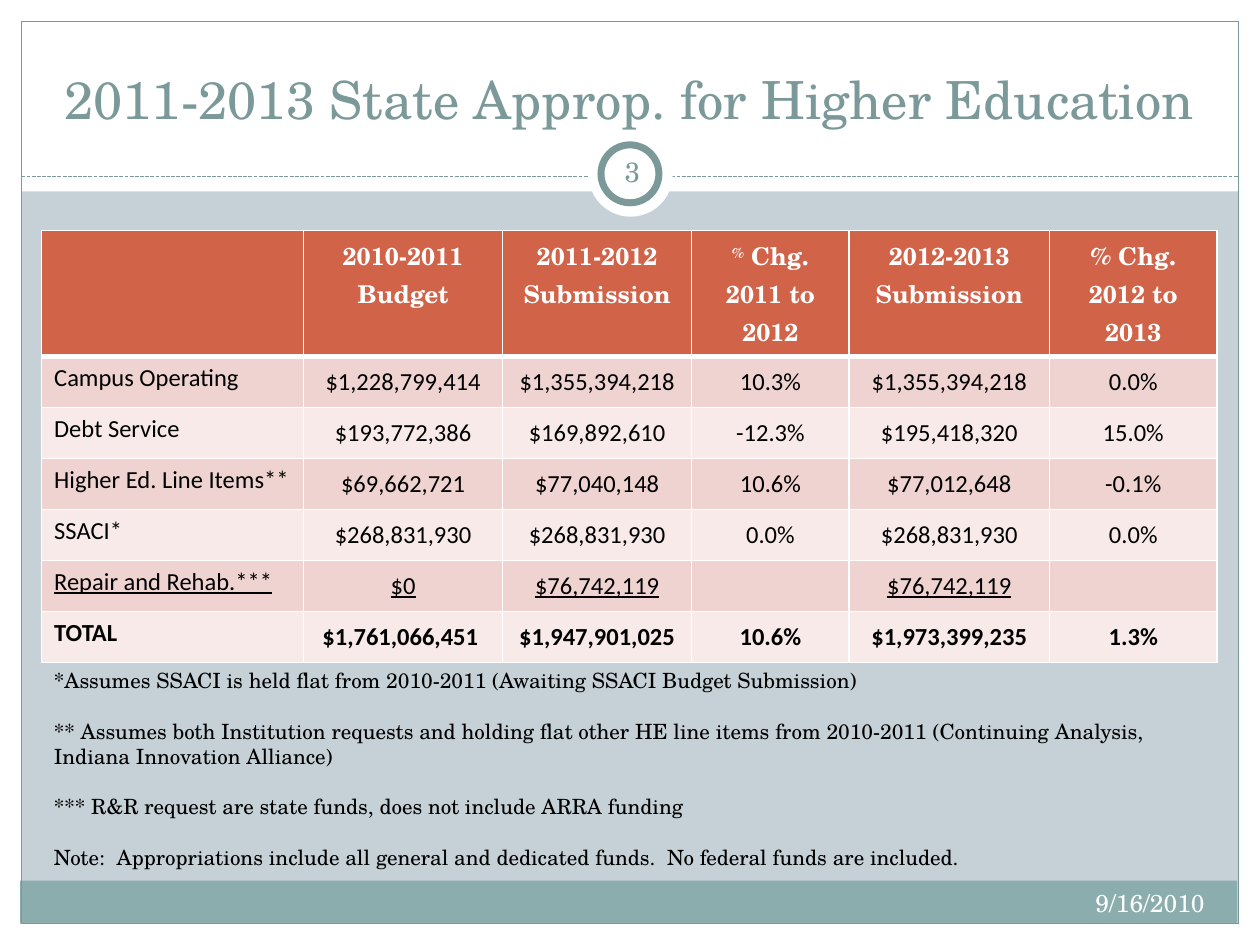
from pptx import Presentation
from pptx.dml.color import RGBColor
from pptx.enum.dml import MSO_LINE
from pptx.enum.shapes import MSO_CONNECTOR, MSO_SHAPE
from pptx.enum.text import MSO_ANCHOR, PP_ALIGN
from pptx.oxml.ns import qn
from pptx.util import Inches, Pt
from lxml.etree import SubElement

SERIF = "TeX Gyre Schola"
SANS = "Calibri"
TEAL, WHITE, BLACK = "7C999A", "FFFFFF", "000000"
BANDS = ["EED3D0", "F7EAE9"]
WIDTHS = [2.08, 1.58, 1.5, 1.25, 1.59, 1.33]
TALL, HEAD = 3.43, 1
HEADS = ["", "2010-2011 Budget", "2011-2012 Submission", "% Chg. 2011 to 2012",
         "2012-2013 Submission", "% Chg. 2012 to 2013"]
ROWS = [
    ["Campus Operating", "$1,228,799,414", "$1,355,394,218", "10.3%", "$1,355,394,218", "0.0%"],
    ["Debt Service", "$193,772,386", "$169,892,610", "-12.3%", "$195,418,320", "15.0%"],
    ["Higher Ed. Line Items**", "$69,662,721", "$77,040,148", "10.6%", "$77,012,648", "-0.1%"],
    ["SSACI*", "$268,831,930", "$268,831,930", "0.0%", "$268,831,930", "0.0%"],
    ["Repair and Rehab.***", "$0", "$76,742,119", "", "$76,742,119", ""],
    ["TOTAL", "$1,761,066,451 ", "$1,947,901,025", "10.6%", "$1,973,399,235", "1.3%"],
]
NOTES = [
    "*Assumes SSACI is held flat from 2010-2011 (Awaiting SSACI Budget Submission)",
    "** Assumes both Institution requests and holding flat other HE line items from "
    "2010-2011 (Continuing Analysis, Indiana Innovation Alliance)",
    "*** R&R request are state funds, does not include ARRA funding",
    "Note:  Appropriations include all general and dedicated funds.  "
    "No federal funds are included.",
]


def color(code):
    return RGBColor.from_string(code)


def write(para, text, size=14, font=SERIF, ink=BLACK, bold=False, under=False,
          align=PP_ALIGN.LEFT, after=0, raised=False):
    para.alignment = align
    para.space_after = Pt(after)
    run = para.add_run()
    run.text = text
    style = run.font
    style.size, style.name = Pt(size), font
    style.bold, style.underline = bold, under
    style.color.rgb = color(ink)
    if raised:
        style._element.set("baseline", "30000")


def shape(slide, kind, box, fill=None, line=None, width=0.75):
    item = slide.shapes.add_shape(kind, *map(Inches, box))
    item.shadow.inherit = False
    if fill:
        item.fill.solid()
        item.fill.fore_color.rgb = color(fill)
    else:
        item.fill.background()
    if line:
        item.line.color.rgb = color(line)
        item.line.width = Pt(width)
    else:
        item.line.fill.background()


def label(slide, box, texts, anchor=MSO_ANCHOR.TOP, inset=0.1, **style):
    frame = slide.shapes.add_textbox(*map(Inches, box)).text_frame
    frame.word_wrap = True
    frame.vertical_anchor = anchor
    frame.margin_left = frame.margin_right = Inches(inset)
    for i, text in enumerate(texts):
        para = frame.add_paragraph() if i else frame.paragraphs[0]
        write(para, text, **style)


def rule(slide, left, right, y):
    line = slide.shapes.add_connector(
        MSO_CONNECTOR.STRAIGHT, Inches(left), Inches(y), Inches(right), Inches(y))
    line.line.color.rgb = color(TEAL)
    line.line.width = Pt(0.75)
    line.line.dash_style = MSO_LINE.SQUARE_DOT
    SubElement(line._element.spPr, qn("a:effectLst"))


def paint(cell, fill, bottom=1, top=1):
    props = cell._tc.get_or_add_tcPr()
    for side, width in zip("LRTB", (1, 1, top, bottom)):
        edge = SubElement(props, qn("a:ln" + side), w=str(Pt(width)))
        solid = SubElement(edge, qn("a:solidFill"))
        SubElement(solid, qn("a:srgbClr"), val=WHITE)
    cell.fill.solid()
    cell.fill.fore_color.rgb = color(fill)


def budget(slide):
    table = slide.shapes.add_table(
        len(ROWS) + 1, len(HEADS), Inches(0.33), Inches(1.83),
        Inches(9.33), Inches(TALL)).table
    for col, width in zip(table.columns, WIDTHS):
        col.width = Inches(width)
    for i, row in enumerate(table.rows):
        row.height = Inches((TALL - HEAD) / len(ROWS) if i else HEAD)
    for c, text in enumerate(HEADS):
        cell = table.cell(0, c)
        paint(cell, "D16349", bottom=3)
        style = dict(ink=WHITE, bold=True, align=PP_ALIGN.CENTER)
        para = cell.text_frame.paragraphs[0]
        if c == 3:
            write(para, text[0], raised=True, **style)
            text = text[1:]
        if text:
            write(para, text, **style)
    for r, row in enumerate(ROWS, 1):
        for c, text in enumerate(row):
            cell = table.cell(r, c)
            paint(cell, BANDS[(r - 1) % 2], top=3 if r == 1 else 1)
            if c:
                cell.vertical_anchor = MSO_ANCHOR.MIDDLE
                cell.margin_left = cell.margin_right = Inches(0.01)
            if text:
                write(cell.text_frame.paragraphs[0], text, font=SANS,
                      bold=row[0] == "TOTAL", under=row[0].startswith("Repair"),
                      align=PP_ALIGN.CENTER if c else PP_ALIGN.LEFT)


def frame(slide):
    rect, oval = MSO_SHAPE.RECTANGLE, MSO_SHAPE.OVAL
    for box in [(0, 7.33, 10, 0.17), (0, 0, 10, 1.52),
                (0, 0, 0.17, 7.5), (9.83, 0, 0.17, 7.5)]:
        shape(slide, rect, box, WHITE)
    shape(slide, rect, (0.16, 6.99, 9.66, 0.34), "8CADAE")
    shape(slide, rect, (0.17, 0.17, 9.66, 7.16), line=TEAL)
    rule(slide, 0.17, 9.83, 1.4)
    shape(slide, oval, (4.67, 1.05, 0.67, 0.67), WHITE)
    shape(slide, oval, (4.77, 1.15, 0.46, 0.46), WHITE, TEAL, 4)


def main():
    deck = Presentation()
    deck.slide_width, deck.slide_height = Inches(10), Inches(7.5)
    slide = deck.slides.add_slide(deck.slide_layouts[6])
    slide.background.fill.solid()
    slide.background.fill.fore_color.rgb = color("C5D1D7")
    frame(slide)
    label(slide, (0.33, 0.25, 9.33, 0.83), ["2011-2013 State Approp. for Higher Education"],
          MSO_ANCHOR.BOTTOM, size=30, ink=TEAL, align=PP_ALIGN.CENTER)
    budget(slide)
    label(slide, (0.33, 5.25, 9.33, 1.92), NOTES, size=12, after=14.4)
    label(slide, (6.33, 7, 3.33, 0.4), ["9/16/2010"], ink=WHITE, align=PP_ALIGN.RIGHT)
    label(slide, (4.77, 1.12, 0.5, 0.48), ["3"], MSO_ANCHOR.MIDDLE, 0.05,
          size=16, ink=TEAL, align=PP_ALIGN.CENTER)
    deck.save("out.pptx")


if __name__ == "__main__":
    main()
